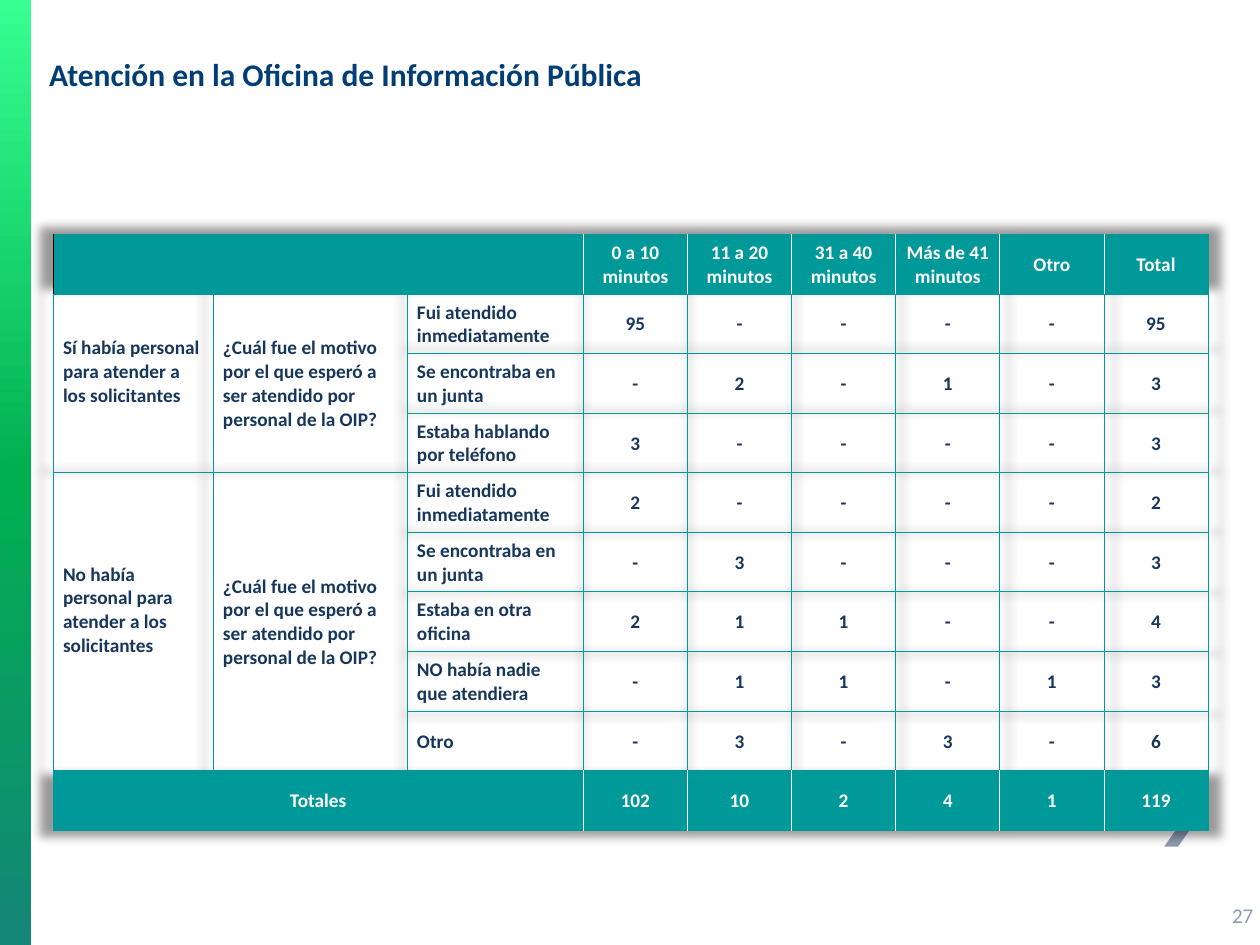
from lxml import etree
from pptx import Presentation
from pptx.dml.color import RGBColor
from pptx.enum.shapes import MSO_SHAPE as Shape
from pptx.enum.text import MSO_ANCHOR as Anchor, PP_ALIGN as Align
from pptx.oxml import parse_xml
from pptx.oxml.ns import nsdecls, qn
from pptx.util import Inches, Pt

TEAL = RGBColor(0x00, 0x99, 0x99)
WHITE = RGBColor(0xFF, 0xFF, 0xFF)
BLACK = RGBColor(0x00, 0x00, 0x00)
NAVY = RGBColor(0x16, 0x36, 0x5C)
TITLE_BLUE = RGBColor(0x00, 0x3E, 0x75)
GREY_BLUE = RGBColor(0x8E, 0x9B, 0xB0)
BAR_STOPS = [(0, "37FF92"), (50, "00B050"), (100, "138677")]
FONT = "Calibri"

# Content
TITLE = "Atención en la Oficina de Información Pública"
PAGE_NUMBER = "27"
HEADERS = ["0 a 10 minutos", "11 a 20 minutos", "31 a 40 minutos",
           "Más de 41 minutos", "Otro", "Total"]
QUESTION = "¿Cuál fue el motivo por el que esperó a ser atendido por personal de la OIP?"
GROUPS = [
    ("Sí había personal para atender a los solicitantes", [
        ("Fui atendido inmediatamente", "95 - - - - 95"),
        ("Se encontraba en un junta", "- 2 - 1 - 3"),
        ("Estaba hablando por teléfono", "3 - - - - 3"),
    ]),
    ("No había personal para atender a los solicitantes", [
        ("Fui atendido inmediatamente", "2 - - - - 2"),
        ("Se encontraba en un junta", "- 3 - - - 3"),
        ("Estaba en otra oficina", "2 1 1 - - 4"),
        ("NO había nadie que atendiera", "- 1 1 - 1 3"),
        ("Otro", "- 3 - 3 - 6"),
    ]),
]
TOTALS = ["102", "10", "2", "4", "1", "119"]
LABEL_WIDTHS = [1.27, 1.54, 1.4]
VALUE_WIDTH = 4.96 / 6
ROW_HEIGHT = 0.473
CHEVRON = [(9.35, 6.25), (9.24, 6.25), (9.4, 6.49), (9.24, 6.72), (9.35, 6.72), (9.51, 6.49)]


def write(frame, text, size=11, color=NAVY, bold=True, align=Align.LEFT):
    frame.word_wrap = True
    para = frame.paragraphs[0]
    para.alignment = align
    span = para.add_run()
    span.text = text
    span.font.name, span.font.size = FONT, Pt(size)
    span.font.bold, span.font.color.rgb = bold, color


def set_borders(cell, left=TEAL, right=TEAL):
    props = cell._tc.get_or_add_tcPr()
    sides = [("lnL", left), ("lnR", right), ("lnT", TEAL), ("lnB", TEAL)]
    for index, (tag, color) in enumerate(sides):
        props.insert(index, parse_xml(
            f'<a:{tag} {nsdecls("a")} w="6350"><a:solidFill>'
            f'<a:srgbClr val="{color}"/></a:solidFill></a:{tag}>'))


def fill_cell(cell, text, label=False, band=False, extra_bottom=0):
    side = 0.08 if label else 0.01
    cell.margin_left = cell.margin_right = Inches(side)
    cell.margin_top, cell.margin_bottom = Inches(0.01), Inches(extra_bottom)
    cell.vertical_anchor = Anchor.MIDDLE
    if text:
        write(cell.text_frame, text, color=WHITE if band else NAVY,
              align=Align.LEFT if label else Align.CENTER)


deck = Presentation()
deck.slide_width, deck.slide_height = Inches(10), Inches(7.5)
page = deck.slides.add_slide(deck.slide_layouts[5])

# Title
title = page.shapes.title
title.left, title.top, title.width, title.height = map(Inches, (0.29, 0.12, 9.29, 0.94))
title.text_frame.vertical_anchor = Anchor.MIDDLE
write(title.text_frame, TITLE, size=18, color=TITLE_BLUE)

# Gradient side bar
bar = page.shapes.add_shape(Shape.RECTANGLE, 0, 0, Inches(0.25), deck.slide_height)
bar.shadow.inherit = False
bar.line.fill.background()
bar.fill.gradient()
bar.fill.gradient_angle = 270
stop_list = bar._element.spPr.find(".//" + qn("a:gsLst"))
for stop in list(stop_list):
    stop_list.remove(stop)
for position, color in BAR_STOPS:
    stop = etree.SubElement(stop_list, qn("a:gs"), pos=str(position * 1000))
    etree.SubElement(stop, qn("a:srgbClr"), val=color)

# Chevron behind the table
points = [(Inches(x), Inches(y)) for x, y in CHEVRON]
builder = page.shapes.build_freeform(*points[0])
builder.add_line_segments(points[1:], close=True)
chevron = builder.convert_to_shape()
chevron.shadow.inherit = False
chevron.fill.solid()
chevron.fill.fore_color.rgb = GREY_BLUE
chevron.line.fill.background()

# Page number
number = page.shapes.add_textbox(Inches(9.68), Inches(7.06), Inches(0.42), Inches(0.4))
number.text_frame.vertical_anchor = Anchor.MIDDLE
write(number.text_frame, PAGE_NUMBER, size=12, color=GREY_BLUE, bold=False)

# Table grid
widths = LABEL_WIDTHS + [VALUE_WIDTH] * len(HEADERS)
first_value = len(LABEL_WIDTHS)
row_count = 2 + sum(len(reasons) for _, reasons in GROUPS)
last_row, last_col = row_count - 1, len(widths) - 1
table = page.shapes.add_table(row_count, len(widths), Inches(0.42), Inches(1.86),
                              Inches(sum(widths)), Inches(ROW_HEIGHT * row_count)).table
table.first_row = table.horz_banding = False
for column, width in zip(table.columns, widths):
    column.width = Inches(width)
for row in table.rows:
    row.height = Inches(ROW_HEIGHT)

# Soft shadow around the table
table._tbl.tblPr.insert(0, parse_xml(
    f'<a:effectLst {nsdecls("a")}><a:outerShdw blurRad="63500" sx="102000" sy="102000" '
    'algn="ctr" rotWithShape="0"><a:prstClr val="black"><a:alpha val="40000"/>'
    '</a:prstClr></a:outerShdw></a:effectLst>'))

# Cell fills and borders
for r in range(row_count):
    band = r in (0, last_row)
    for c in range(len(widths)):
        cell = table.cell(r, c)
        if band:
            cell.fill.solid()
            cell.fill.fore_color.rgb = TEAL
            left = WHITE if c >= first_value else BLACK if (r, c) == (0, 0) else TEAL
            right = WHITE if first_value - 1 <= c < last_col else TEAL
            set_borders(cell, left, right)
        else:
            cell.fill.background()
            set_borders(cell)

# Header and totals rows
for r, label, values in [(0, "", HEADERS), (last_row, "Totales", TOTALS)]:
    table.cell(r, 0).merge(table.cell(r, first_value - 1))
    fill_cell(table.cell(r, 0), label, band=True)
    for c, value in enumerate(values, first_value):
        fill_cell(table.cell(r, c), value, band=True)

# Body rows
top = 1
for group, reasons in GROUPS:
    bottom = top + len(reasons) - 1
    for c, text, extra in [(0, group, 0.19), (1, QUESTION, 0)]:
        table.cell(top, c).merge(table.cell(bottom, c))
        fill_cell(table.cell(top, c), text, label=True, extra_bottom=extra)
    for r, (reason, values) in enumerate(reasons, top):
        fill_cell(table.cell(r, 2), reason, label=True)
        for c, value in enumerate(values.split(), first_value):
            fill_cell(table.cell(r, c), value)
    top = bottom + 1

deck.save("out.pptx")
